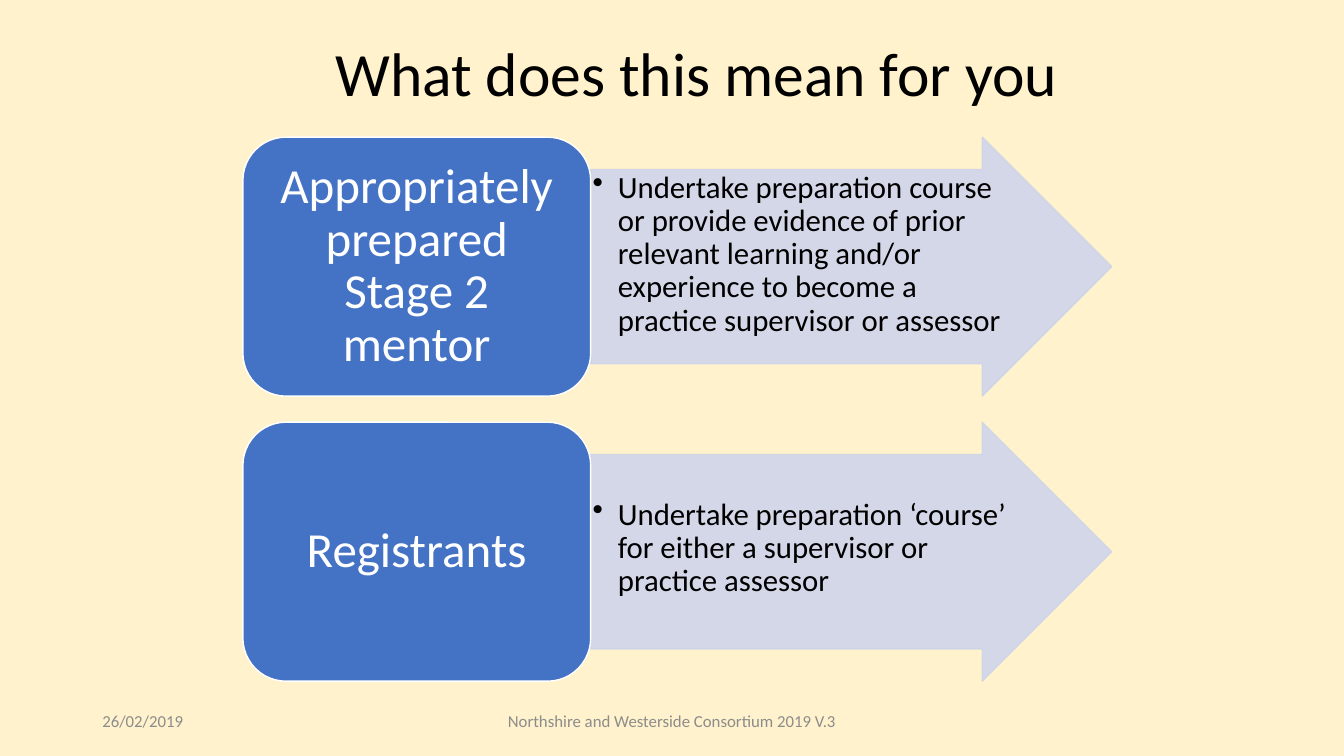
from dataclasses import dataclass

from lxml import etree
from pptx import Presentation
from pptx.dml.color import RGBColor
from pptx.enum.shapes import MSO_SHAPE
from pptx.enum.text import MSO_ANCHOR, PP_ALIGN
from pptx.oxml.ns import qn
from pptx.util import Pt

ARROW, BOX = MSO_SHAPE.RIGHT_ARROW, MSO_SHAPE.ROUNDED_RECTANGLE
TOP, MIDDLE = MSO_ANCHOR.TOP, MSO_ANCHOR.MIDDLE
LEFT, CENTER = PP_ALIGN.LEFT, PP_ALIGN.CENTER

COLORS = {
    "background": "FFF2CC",
    "text": "000000",
    "box": "4472C4",
    "white": "FFFFFF",
    "arrow": "CFD5EA",
    "footer": "8C8C8C",
}
FONT = "Calibri"
BOX_LEFT, BOX_WIDTH = 173.5, 248.4
ARROW_LEFT, ARROW_WIDTH = BOX_LEFT + BOX_WIDTH, 372.2
ROW_TOP, ROW_HEIGHT, ROW_PITCH = 98, 185, 203.6


@dataclass
class Row:
    role: str
    action: str
    top_inset: float


@dataclass
class Footer:
    text: str
    left: float
    width: float
    align: PP_ALIGN


ROWS = [
    Row("Appropriately prepared Stage 2 mentor",
        "Undertake preparation course or provide evidence of prior relevant "
        "learning and/or experience to become a practice supervisor or assessor", 1.5),
    Row("Registrants",
        "Undertake preparation ‘course’ for either a supervisor or practice assessor", 31.5),
]
FOOTERS = [
    Footer("Northshire and Westerside Consortium 2019 V.3", 318, 324, CENTER),
    Footer("26/02/2019", 66, 216, LEFT),
]


def rgb(name: str) -> RGBColor:
    return RGBColor.from_string(COLORS[name])


def write(shape, text: str, size: float, color: str, align: PP_ALIGN,
          anchor: MSO_ANCHOR = MIDDLE, spacing: float = 0.9):
    tf = shape.text_frame
    tf.word_wrap = True
    tf.vertical_anchor = anchor
    p = tf.paragraphs[0]
    p.text = text
    p.alignment = align
    p.line_spacing = spacing
    p.font.name, p.font.size = FONT, Pt(size)
    p.font.color.rgb = rgb(color)
    return p


def set_insets(shape, left: float, top: float, right: float, bottom: float) -> None:
    tf = shape.text_frame
    tf.margin_left, tf.margin_top = Pt(left), Pt(top)
    tf.margin_right, tf.margin_bottom = Pt(right), Pt(bottom)


def add_bullet(p, indent: float) -> None:
    pPr = p._p.get_or_add_pPr()
    pPr.set("marL", str(Pt(indent)))
    pPr.set("indent", str(-Pt(indent)))
    bullet = etree.Element(qn("a:buChar"), char="•")
    pPr.find(qn("a:defRPr")).addprevious(bullet)


def add_block(s, kind: MSO_SHAPE, left: float, top: float, width: float,
              fill: str, line: str):
    sp = s.shapes.add_shape(kind, Pt(left), Pt(top), Pt(width), Pt(ROW_HEIGHT))
    sp.shadow.inherit = False
    sp.fill.solid()
    sp.fill.fore_color.rgb = rgb(fill)
    sp.line.color.rgb = rgb(line)
    sp.line.width = Pt(1)
    return sp


def add_row(s, row: Row, top: float) -> None:
    arrow = add_block(s, ARROW, ARROW_LEFT, top, ARROW_WIDTH, "arrow", "arrow")
    arrow.adjustments[0], arrow.adjustments[1] = 0.75, 0.5
    for color in arrow._element.spPr.iter(qn("a:srgbClr")):
        etree.SubElement(color, qn("a:alpha"), val="90000")
    add_bullet(write(arrow, row.action, 22, "text", LEFT, TOP), 18)
    set_insets(arrow, 1.5, row.top_inset, 1.5, 1.5)

    box = add_block(s, BOX, BOX_LEFT, top, BOX_WIDTH, "box", "white")
    write(box, row.role, 35, "white", CENTER)
    set_insets(box, 10.5, 5, 10.5, 5)


def add_footer(s, footer: Footer) -> None:
    sp = s.shapes.add_textbox(Pt(footer.left), Pt(500.5), Pt(footer.width), Pt(28.8))
    write(sp, footer.text, 12, "footer", footer.align, spacing=1.0)


def main() -> None:
    prs = Presentation()
    prs.slide_width, prs.slide_height = Pt(960), Pt(540)
    s = prs.slides.add_slide(prs.slide_layouts[5])
    s.background.fill.solid()
    s.background.fill.fore_color.rgb = rgb("background")

    title = s.shapes.title
    title.left, title.top, title.width, title.height = Pt(101.5), Pt(11.5), Pt(792.7), Pt(86.4)
    write(title, "What does this mean for you", 44, "text", CENTER)

    for i, row in enumerate(ROWS):
        add_row(s, row, ROW_TOP + i * ROW_PITCH)
    for footer in FOOTERS:
        add_footer(s, footer)
    prs.save("out.pptx")


if __name__ == "__main__":
    main()
